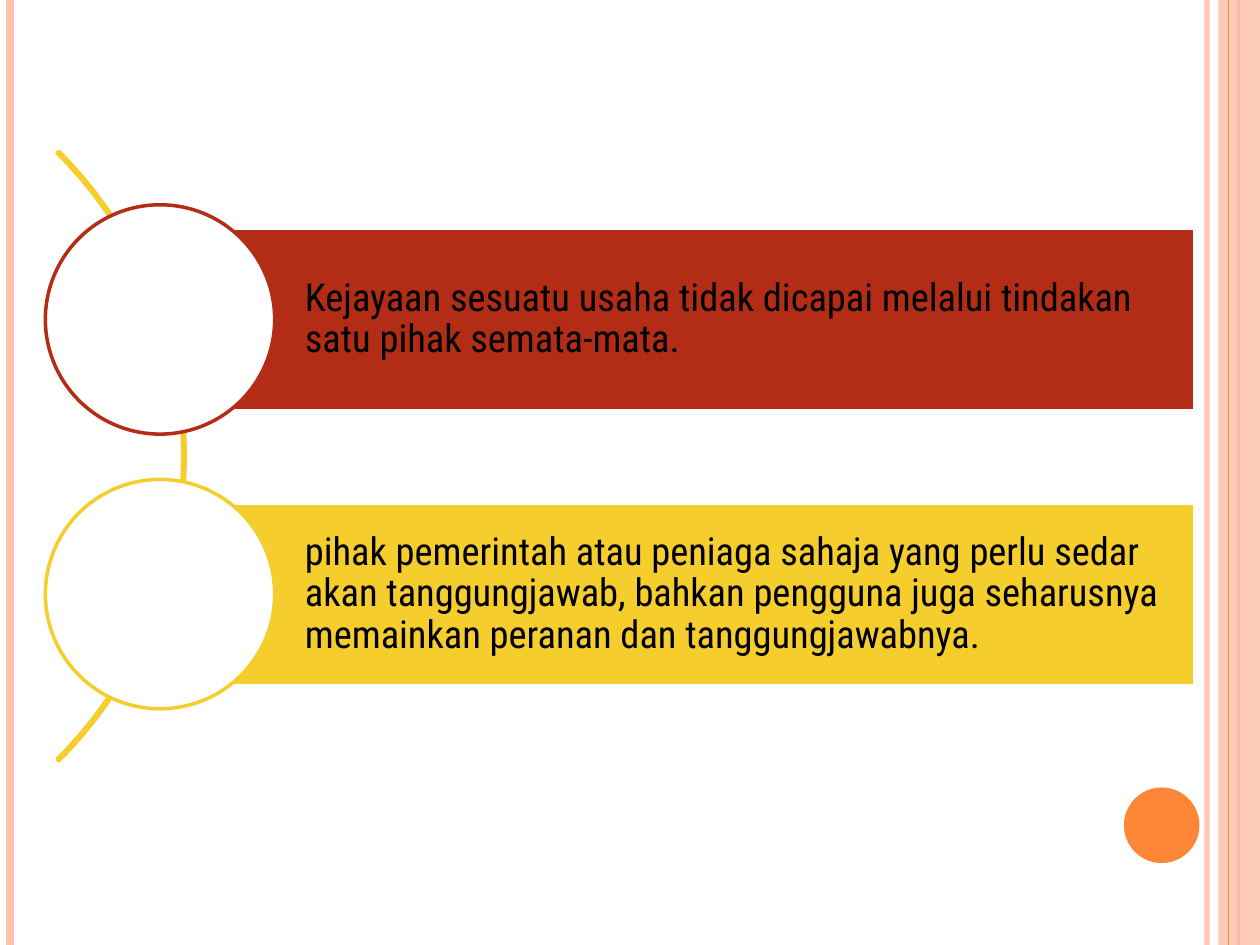
from dataclasses import dataclass

from lxml.etree import SubElement
from pptx import Presentation
from pptx.dml.color import RGBColor
from pptx.enum.shapes import MSO_CONNECTOR, MSO_SHAPE
from pptx.enum.text import MSO_ANCHOR, PP_ALIGN
from pptx.oxml.ns import qn
from pptx.util import Inches, Pt


@dataclass(frozen=True)
class Theme:
    """Colours, font and sizes of the slide."""
    white: str = "FFFFFF"
    black: str = "000000"
    peach: str = "FEC3AE"
    orange: str = "FE8637"
    red: str = "B32C16"
    yellow: str = "F5CD2D"
    font: str = "Roboto Condensed"
    text_size: float = 22
    outline: float = 2


THEME = Theme()
WIDTH, HEIGHT = 10, 7.5
BAR_LEFT, BAR_TOP, BAR_WIDTH, BAR_HEIGHT = 1.27, 1.81, 8.21, 1.45
BAR_STEP = 2.18
CIRCLE = 1.82

STRIPES = [
    (9.58, THEME.peach, 3, 93),
    (0.08, THEME.peach, 4.5, 100),
    (9.83, THEME.orange, 1.5, 100),
]
POINTS = [
    ("Kejayaan sesuatu usaha tidak dicapai melalui tindakan satu pihak "
     "semata-mata.", THEME.red),
    ("pihak pemerintah atau peniaga sahaja yang perlu sedar akan "
     "tanggungjawab, bahkan pengguna juga seharusnya memainkan peranan dan "
     "tanggungjawabnya.", THEME.yellow),
]


def set_alpha(element, percent):
    """Make the first colour in the element partly transparent."""
    color = next(element.iter(qn("a:srgbClr")))
    SubElement(color, qn("a:alpha"), val=str(percent * 1000))


def add_stripe(slide, x, color, width, alpha=100):
    """Draw a vertical line over the full slide height."""
    line = slide.shapes.add_connector(
        MSO_CONNECTOR.STRAIGHT, Inches(x), 0, Inches(x), Inches(HEIGHT))
    line.line.color.rgb = RGBColor.from_string(color)
    line.line.width = Pt(width)
    sp_pr = line._element.spPr
    if alpha < 100:
        set_alpha(sp_pr, alpha)
    SubElement(sp_pr, qn("a:effectLst"))


def add_figure(slide, kind, box, fill=None, outline=None):
    """Draw a preset shape with an optional fill and outline."""
    sp = slide.shapes.add_shape(kind, *map(Inches, box))
    sp.shadow.inherit = False
    if fill:
        sp.fill.solid()
        sp.fill.fore_color.rgb = RGBColor.from_string(fill)
    else:
        sp.fill.background()
    if outline:
        sp.line.color.rgb = RGBColor.from_string(outline)
        sp.line.width = Pt(THEME.outline)
    else:
        sp.line.fill.background()
    return sp


def set_bar_text(sp, text):
    """Write left-aligned text clear of the circle."""
    tf = sp.text_frame
    tf.text = text
    tf.word_wrap = True
    tf.vertical_anchor = MSO_ANCHOR.MIDDLE
    tf.margin_left = Inches(1.15)
    tf.margin_top = tf.margin_right = tf.margin_bottom = Inches(0.06)
    p = tf.paragraphs[0]
    p.alignment = PP_ALIGN.LEFT
    p.line_spacing = 0.9
    font = p.runs[0].font
    font.name = THEME.font
    font.size = Pt(THEME.text_size)
    font.color.rgb = RGBColor.from_string(THEME.black)


def add_point(slide, top, text, color):
    """Draw a text bar with a circle centred on its left edge."""
    bar = add_figure(slide, MSO_SHAPE.RECTANGLE,
                     (BAR_LEFT, top, BAR_WIDTH, BAR_HEIGHT), color, THEME.white)
    set_bar_text(bar, text)
    circle_top = top + (BAR_HEIGHT - CIRCLE) / 2
    add_figure(slide, MSO_SHAPE.OVAL,
               (BAR_LEFT - CIRCLE / 2, circle_top, CIRCLE, CIRCLE),
               THEME.white, color)


def add_frame(slide):
    """Draw the side stripes and the orange dot."""
    for stripe in STRIPES:
        add_stripe(slide, *stripe)
    band = add_figure(slide, MSO_SHAPE.RECTANGLE,
                      (9.67, 0, WIDTH - 9.67, HEIGHT), THEME.peach)
    set_alpha(band._element.spPr, 87)
    add_stripe(slide, 9.75, THEME.orange, 0.75)
    add_figure(slide, MSO_SHAPE.OVAL, (8.92, 6.25, 0.6, 0.6), THEME.orange)


def add_arc(slide):
    """Draw the thin arc that links the circles."""
    arc = add_figure(slide, MSO_SHAPE.BLOCK_ARC, (-5.37, 0.2, 6.84, 6.84),
                     outline=THEME.yellow)
    for i, value in enumerate((189, 27, 0.003)):
        arc.adjustments[i] = value


def main():
    """Build and save the slide."""
    prs = Presentation()
    prs.slide_width, prs.slide_height = Inches(WIDTH), Inches(HEIGHT)
    slide = prs.slides.add_slide(prs.slide_layouts[6])
    add_frame(slide)
    add_arc(slide)
    for i, (text, color) in enumerate(POINTS):
        add_point(slide, BAR_TOP + i * BAR_STEP, text, color)
    prs.save("out.pptx")


if __name__ == "__main__":
    main()
